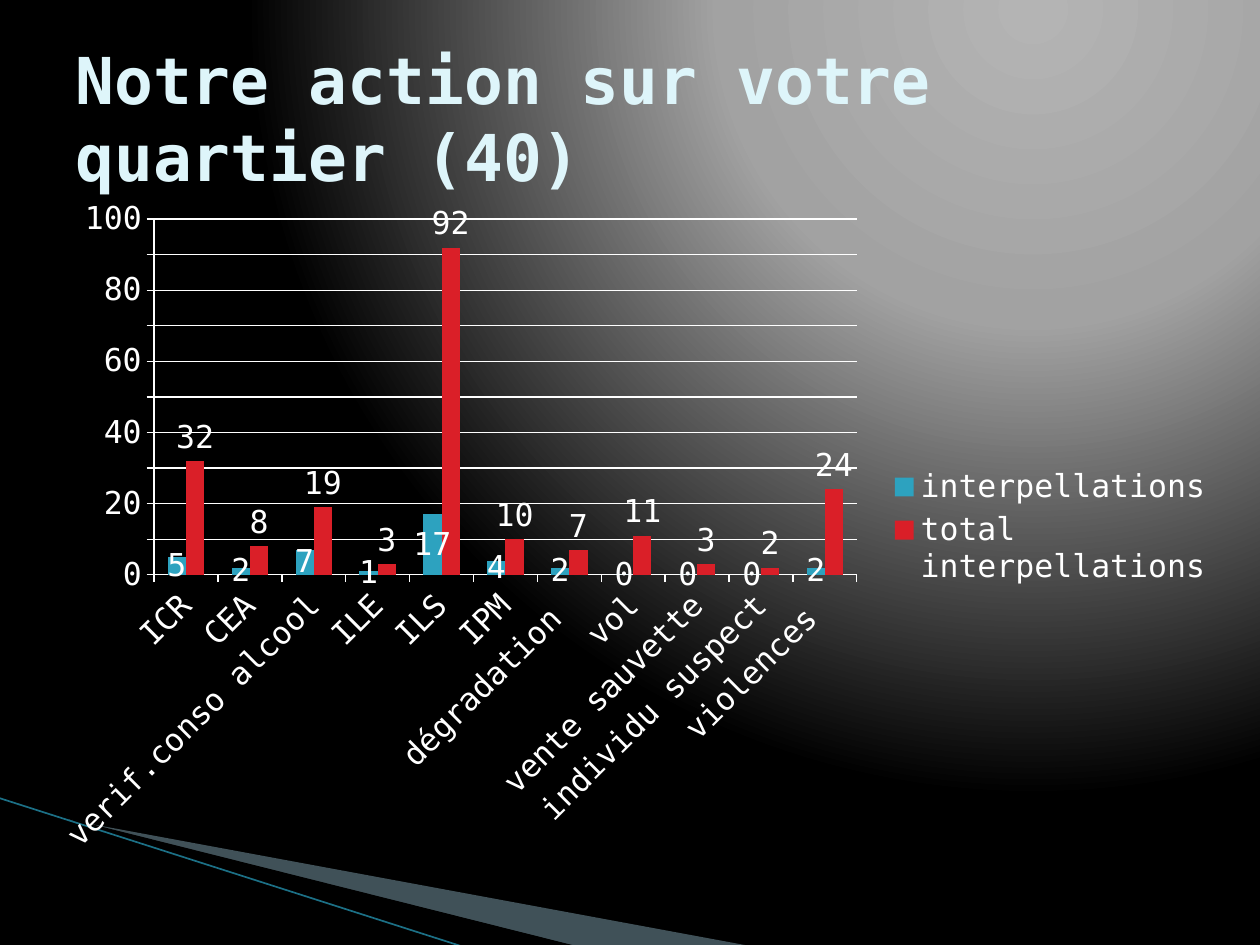
from dataclasses import dataclass

from lxml.etree import SubElement
from pptx import Presentation
from pptx.chart.data import CategoryChartData as Data
from pptx.dml.color import RGBColor
from pptx.enum.chart import XL_CHART_TYPE as Kind
from pptx.enum.chart import XL_LABEL_POSITION as Spot
from pptx.enum.chart import XL_LEGEND_POSITION as Side
from pptx.enum.chart import XL_TICK_MARK as Tick
from pptx.enum.shapes import MSO_CONNECTOR as Wire
from pptx.enum.text import MSO_ANCHOR as Anchor
from pptx.oxml import parse_xml
from pptx.oxml.ns import nsdecls, qn
from pptx.util import Pt

SCALE = 914400 / 126
FONT = "DejaVu Sans Mono"
WHITE = "FFFFFF"


@dataclass
class Wedge:
    points: list[tuple[int, int]]
    color: str
    alpha: int = 100


@dataclass
class Series:
    name: str
    values: list[int]
    color: str
    spot: Spot


WEDGES = [
    Wedge([(69, 820), (750, 946), (575, 946), (69, 819)], "A0CBDC", 40),
    Wedge([(67, 818), (576, 946), (469, 948), (68, 819)], "000000"),
]
STOPS = [(0, "B4B4B4"), (40, "A2A2A2"), (100, "000000")]
CATS = ["ICR", "CEA", "verif.conso alcool", "ILE", "ILS", "IPM", "dégradation ",
        "vol", "vente sauvette", "individu suspect", "violences "]
SERIES = [
    Series("interpellations", [5, 2, 7, 1, 17, 4, 2, 0, 0, 0, 2],
           "2DA2BF", Spot.CENTER),
    Series("total interpellations", [32, 8, 19, 3, 92, 10, 7, 11, 3, 2, 24],
           "DA1F28", Spot.OUTSIDE_END),
]


def px(*nums: int) -> list[int]:
    return [round(n * SCALE) for n in nums]


def rgb(text: str) -> RGBColor:
    return RGBColor.from_string(text)


def paint(fill, color: str) -> None:
    fill.solid()
    fill.fore_color.rgb = rgb(color)


def style(font, size: float, color: str, bold: bool = False) -> None:
    font.name, font.size, font.bold = FONT, Pt(size), bold
    font.color.rgb = rgb(color)


def add_back(slide) -> None:
    stops = "".join(f'<a:gs pos="{at * 1000}"><a:srgbClr val="{color}"/></a:gs>'
                    for at, color in STOPS)
    back = parse_xml(
        f'<p:bg {nsdecls("p", "a")}><p:bgPr><a:gradFill><a:gsLst>{stops}</a:gsLst>'
        '<a:path path="circle"><a:fillToRect l="65000" t="0" r="0" b="98000"/>'
        '</a:path></a:gradFill><a:effectLst/></p:bgPr></p:bg>')
    slide.element.cSld.insert(0, back)


def add_wedge(slide, wedge: Wedge) -> None:
    first, *rest = wedge.points
    form = slide.shapes.build_freeform(*first, scale=SCALE)
    form.add_line_segments(rest, close=True)
    shape = form.convert_to_shape()
    shape.shadow.inherit = False
    shape.line.fill.background()
    paint(shape.fill, wedge.color)
    if wedge.alpha < 100:
        tone = shape.element.spPr.find(".//" + qn("a:srgbClr"))
        SubElement(tone, qn("a:alpha"), val=str(wedge.alpha * 1000))


def add_line(slide) -> None:
    line = slide.shapes.add_connector(Wire.STRAIGHT, *px(-1, 798, 467, 948))
    line.line.color.rgb = rgb("1C7086")
    line.line.width = Pt(0.95)
    SubElement(line.element.spPr, qn("a:effectLst"))


def add_title(slide) -> None:
    frame = slide.shapes.add_textbox(*px(63, 38, 1134, 158)).text_frame
    frame.word_wrap = True
    frame.vertical_anchor = Anchor.MIDDLE
    para = frame.paragraphs[0]
    para.text = "Notre action sur votre quartier (40)"
    style(para.font, 36.9, "DEF5FA", True)


def set_axis(axis) -> None:
    axis.major_tick_mark = Tick.OUTSIDE
    axis.minor_tick_mark = Tick.NONE
    axis.format.line.color.rgb = rgb(WHITE)
    style(axis.tick_labels.font, 18, WHITE)


def set_plot(chart) -> None:
    area = chart.element.chart.plotArea
    for old in area.findall(qn("c:layout")):
        area.remove(old)
    box = {"x": 0.1, "y": 0.05, "w": 0.59, "h": 0.52}
    sizes = "".join(f'<c:{key} val="{val}"/>' for key, val in box.items())
    area.insert(0, parse_xml(
        f'<c:layout {nsdecls("c")}><c:manualLayout><c:layoutTarget val="inner"/>'
        f'<c:xMode val="edge"/><c:yMode val="edge"/>{sizes}'
        '</c:manualLayout></c:layout>'))


def add_chart(slide) -> None:
    data = Data()
    data.categories = CATS
    for item in SERIES:
        data.add_series(item.name, item.values)
    chart = slide.shapes.add_chart(
        Kind.COLUMN_CLUSTERED, *px(35, 185, 1191, 684), data).chart
    style(chart.font, 18, WHITE)
    chart.has_title = False
    chart.has_legend = True
    chart.legend.position = Side.RIGHT
    chart.legend.include_in_layout = False
    style(chart.legend.font, 18, WHITE)

    names, scale = chart.category_axis, chart.value_axis
    set_axis(names)
    set_axis(scale)
    body = names._element.find(qn("c:txPr")).find(qn("a:bodyPr"))
    body.set("rot", "-2700000")
    scale.minimum_scale, scale.maximum_scale = 0, 100
    scale.major_unit = 10
    scale.has_major_gridlines = True
    scale.major_gridlines.format.line.color.rgb = rgb(WHITE)

    plot = chart.plots[0]
    plot.gap_width = 150
    plot.vary_by_categories = False
    for item, bars in zip(SERIES, plot.series):
        paint(bars.format.fill, item.color)
        bars.invert_if_negative = False
        labels = bars.data_labels
        labels.show_value = True
        labels.position = item.spot
        style(labels.font, 18, WHITE)
    set_plot(chart)


def main() -> None:
    deck = Presentation()
    deck.slide_width, deck.slide_height = px(1260, 945)
    slide = deck.slides.add_slide(deck.slide_layouts[6])
    add_back(slide)
    for wedge in WEDGES:
        add_wedge(slide, wedge)
    add_line(slide)
    add_title(slide)
    add_chart(slide)
    deck.save("out.pptx")


if __name__ == "__main__":
    main()
